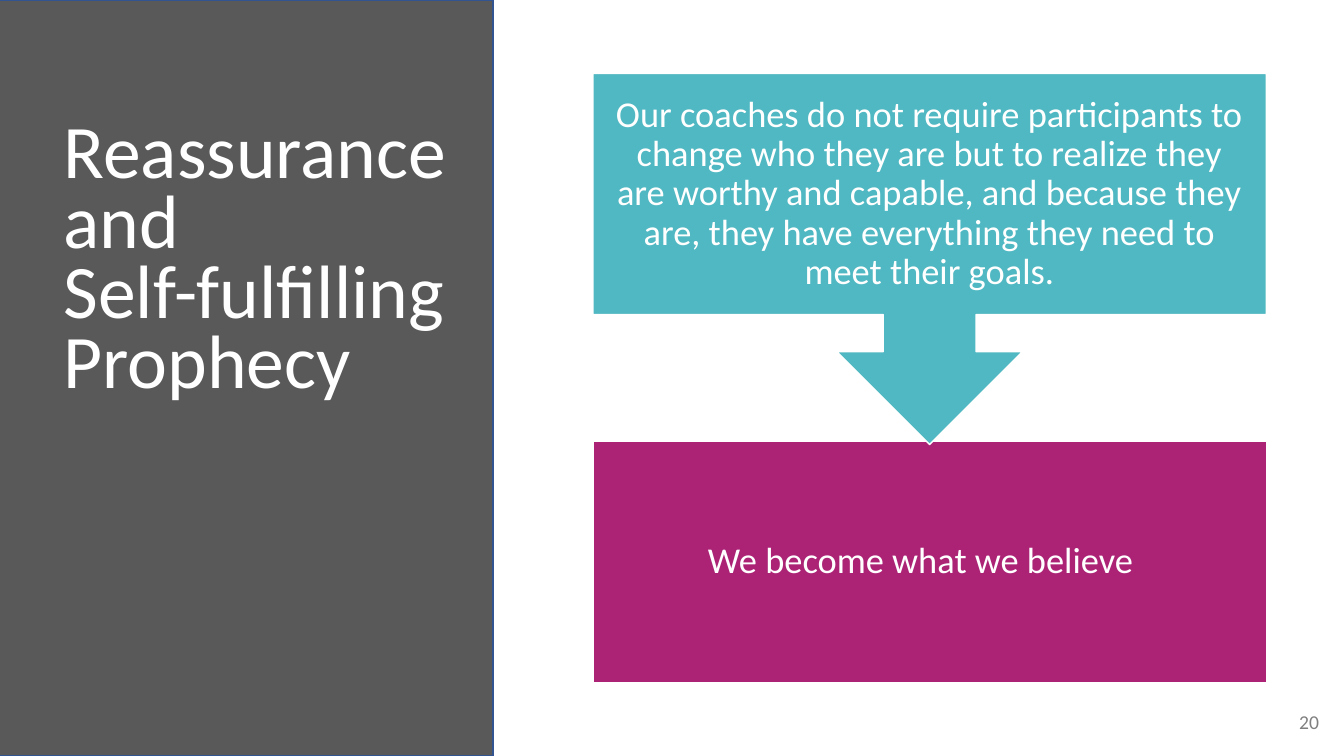
from pptx import Presentation
from pptx.dml.color import RGBColor
from pptx.enum.shapes import MSO_SHAPE
from pptx.enum.text import MSO_ANCHOR, MSO_AUTO_SIZE, PP_ALIGN
from pptx.util import Inches, Pt

WIDE, HIGH = Inches(13.33), Inches(7.5)
WHITE = RGBColor(0xFF, 0xFF, 0xFF)
DARK = RGBColor(0x59, 0x59, 0x59)
NAVY = RGBColor(0x32, 0x54, 0x91)
PLUM = RGBColor(0xAC, 0x23, 0x76)
TEAL = RGBColor(0x50, 0xB8, 0xC2)
GREY = RGBColor(0x80, 0x80, 0x80)

LEFT, SPAN, DEEP = 44.11, 50.11, 31.87
TOP, LOW = 9.73, 58.4


def area(left, top, width, height):
    return (round(WIDE * left / 100), round(HIGH * top / 100),
            round(WIDE * width / 100), round(HIGH * height / 100))


def block(slide, kind, box, fill, edge):
    shape = slide.shapes.add_shape(kind, *area(*box))
    shape.shadow.inherit = False
    shape.fill.solid()
    shape.fill.fore_color.rgb = fill
    shape.line.color.rgb = edge
    shape.line.width = Pt(1)
    return shape


def write(shape, text, size=26, color=WHITE, align=PP_ALIGN.CENTER,
          pitch=0.9, after=9, inset=None):
    frame = shape.text_frame
    frame.word_wrap = True
    frame.auto_size = MSO_AUTO_SIZE.NONE
    frame.vertical_anchor = MSO_ANCHOR.MIDDLE
    if inset is not None:
        frame.margin_left = frame.margin_right = inset
        frame.margin_top = frame.margin_bottom = inset
    frame.text = text
    for para in frame.paragraphs:
        para.alignment = align
        para.line_spacing = pitch
        para.space_before = Pt(0)
        para.space_after = Pt(after)
        for run in para.runs:
            run.font.name = "Calibri"
            run.font.size = Pt(size)
            run.font.color.rgb = color


def label(slide, box, text, **style):
    write(slide.shapes.add_textbox(*area(*box)), text, **style)


def head(slide, box, text, **style):
    title = slide.shapes.title
    title.left, title.top, title.width, title.height = area(*box)
    slide.shapes.element.append(title.element)
    write(title, text, **style)


def main():
    deck = Presentation()
    deck.slide_width, deck.slide_height = WIDE, HIGH
    slide = deck.slides.add_slide(deck.slide_layouts[5])
    block(slide, MSO_SHAPE.RECTANGLE, (-0.83, 0, 37.51, 100), DARK, NAVY)
    head(slide, (3.98, 15.07, 32.03, 39.6),
         "Reassurance and \vSelf-fulfilling Prophecy",
         size=54, align=PP_ALIGN.LEFT, pitch=Pt(50), after=6)
    block(slide, MSO_SHAPE.RECTANGLE, (LEFT, LOW, SPAN, DEEP), PLUM, WHITE)
    label(slide, (LEFT, LOW, SPAN - 1.3, DEEP),
          "We become what we believe", inset=Inches(0.2))
    arrow = block(slide, MSO_SHAPE.UP_ARROW_CALLOUT,
                  (LEFT, TOP, SPAN, 49.07), TEAL, WHITE)
    arrow.rotation = 180
    label(slide, (LEFT, TOP, SPAN, DEEP),
          "Our coaches do not require participants to change who they are "
          "but to realize they are worthy and capable, and because they are, "
          "they have everything they need to meet their goals.",
          inset=Inches(0.2))
    label(slide, (76.37, 92.8, 22.51, 5.33), "20", size=14, color=GREY,
          align=PP_ALIGN.RIGHT, pitch=1.0, after=6)
    deck.save("out.pptx")


if __name__ == "__main__":
    main()
